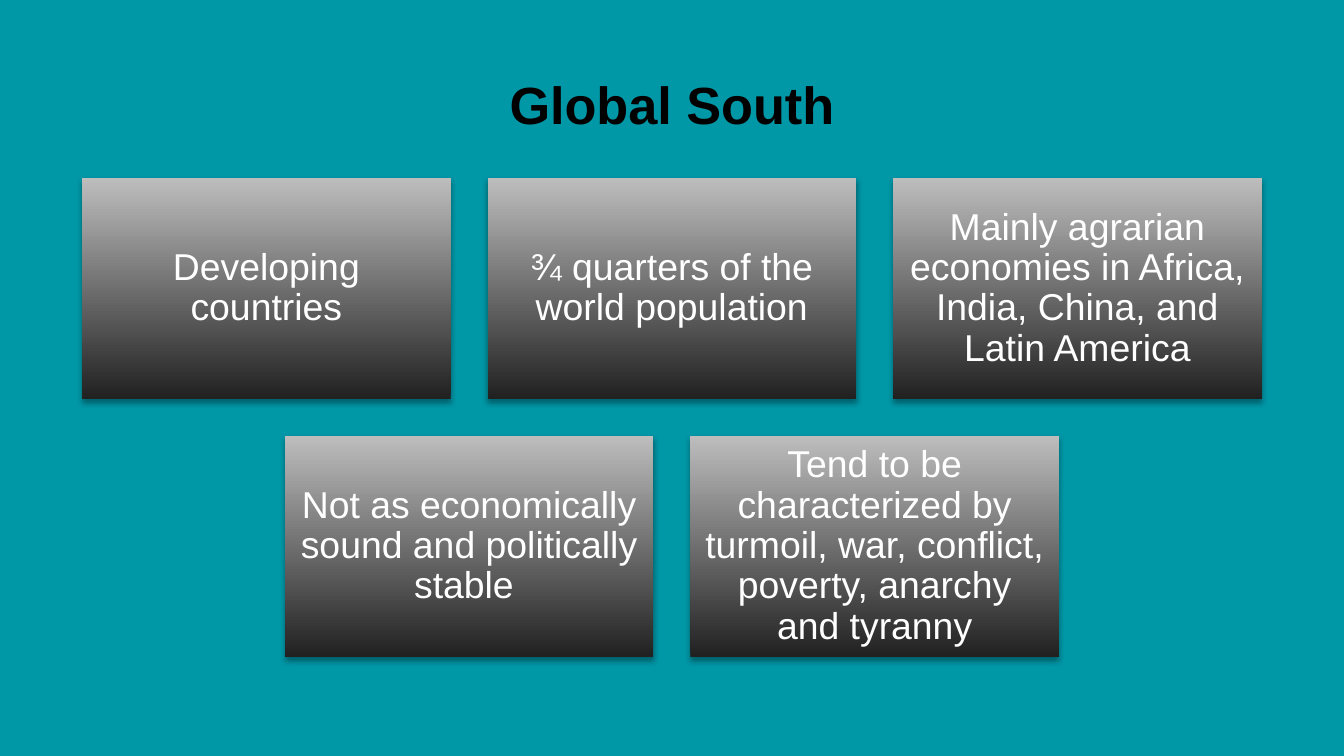
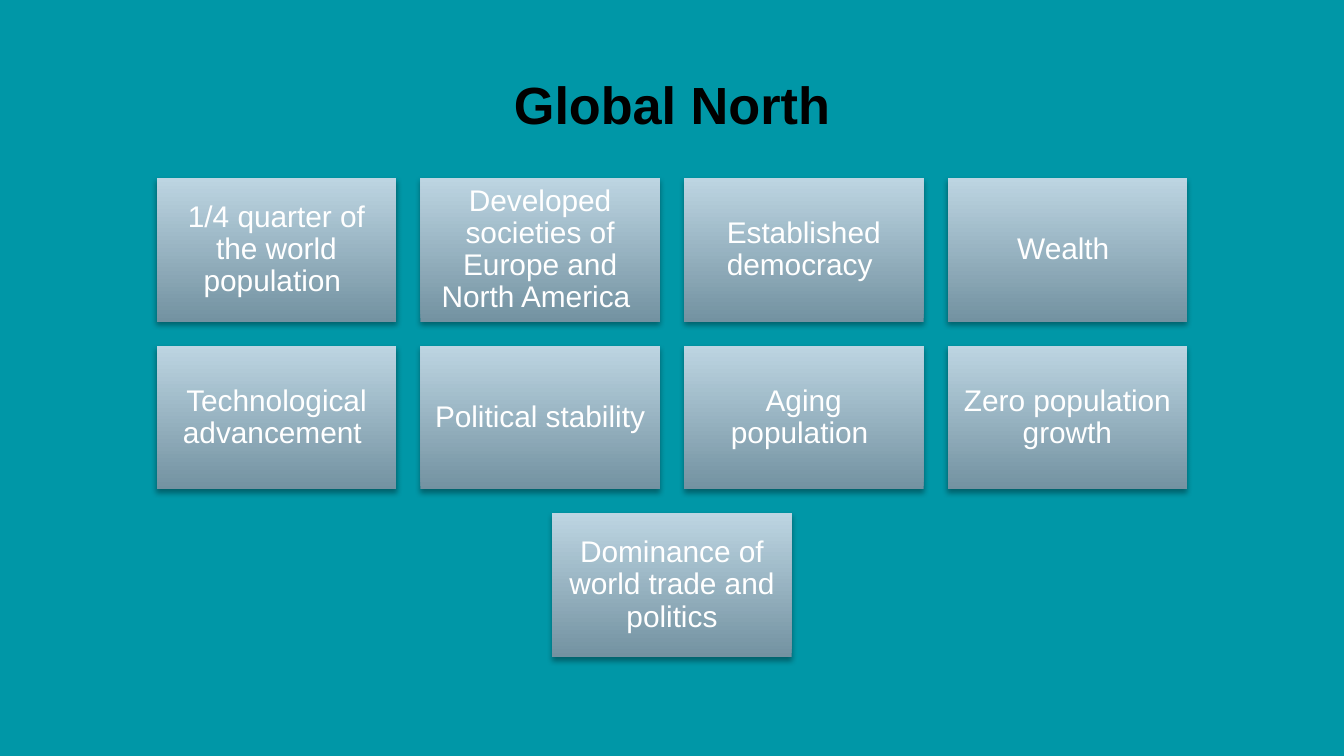
from lxml import etree
from pptx import Presentation
from pptx.dml.color import RGBColor
from pptx.enum.shapes import MSO_SHAPE
from pptx.enum.text import MSO_ANCHOR, PP_ALIGN
from pptx.oxml.ns import qn
from pptx.util import Pt

SLIDE_WIDTH, SLIDE_HEIGHT = 720, 405
GRID_TOP = 95.3
FONT = "Arial"

TEAL = RGBColor(0x00, 0x97, 0xA7)
BLACK = RGBColor(0x00, 0x00, 0x00)
WHITE = RGBColor(0xFF, 0xFF, 0xFF)
GREYS = (RGBColor(0x21, 0x21, 0x21), RGBColor(0xBD, 0xBD, 0xBD))
BLUES = (RGBColor(0x73, 0x92, 0xA1), RGBColor(0xBD, 0xD5, 0xE2))

SOUTH_ROWS = [
    [
        "Developing countries",
        "¾ quarters of the world population",
        "Mainly agrarian economies in Africa, India, China, and Latin America",
    ],
    [
        "Not as economically sound and politically stable ",
        "Tend to be characterized by turmoil, war, conflict, poverty, anarchy and tyranny",
    ],
]
NORTH_ROWS = [
    [
        "1/4 quarter of the world population ",
        "Developed societies of Europe and North America ",
        "Established democracy ",
        "Wealth ",
    ],
    [
        "Technological advancement ",
        "Political stability",
        "Aging population ",
        "Zero population growth",
    ],
    ["Dominance of world trade and politics"],
]


def write_text(shape, text, size, color, inset, bold=False):
    frame = shape.text_frame
    frame.text = text
    frame.word_wrap = True
    frame.vertical_anchor = MSO_ANCHOR.MIDDLE
    frame.margin_left = frame.margin_right = Pt(inset)
    frame.margin_top = frame.margin_bottom = Pt(inset)
    para = frame.paragraphs[0]
    para.alignment = PP_ALIGN.CENTER
    para.line_spacing = 0.9
    font = para.runs[0].font
    font.name, font.size, font.bold = FONT, Pt(size), bold
    font.color.rgb = color


def add_soft_shadow(shape):
    """Cast a faint black shadow straight down."""
    shape.shadow.inherit = False
    effects = shape._element.spPr.find(qn("a:effectLst"))
    shadow = etree.SubElement(
        effects, qn("a:outerShdw"), blurRad=str(Pt(3.1)), dist=str(Pt(1.8)),
        dir="5400000", rotWithShape="0",
    )
    color = etree.SubElement(shadow, qn("a:srgbClr"), val=str(BLACK))
    etree.SubElement(color, qn("a:alpha"), val="35000")


def add_card(page, left, top, width, height, text, size, colors):
    card = page.shapes.add_shape(
        MSO_SHAPE.RECTANGLE, Pt(left), Pt(top), Pt(width), Pt(height)
    )
    card.fill.gradient()
    card.fill.gradient_angle = 90
    for stop, color in zip(card.fill.gradient_stops, colors):
        stop.color.rgb = color
    card.line.fill.background()
    add_soft_shadow(card)
    write_text(card, text, size, WHITE, inset=0.3 * size)


def add_card_grid(page, rows, width, size, colors):
    """Stack centred rows of cards; height and gap follow from the width."""
    height, gap = 0.6 * width, 0.1 * width
    for row_index, row in enumerate(rows):
        row_width = len(row) * (width + gap) - gap
        left = (SLIDE_WIDTH - row_width) / 2
        top = GRID_TOP + row_index * (height + gap)
        for column, text in enumerate(row):
            add_card(page, left + column * (width + gap), top, width, height,
                     text, size, colors)


def add_page(deck, title):
    page = deck.slides.add_slide(deck.slide_layouts[6])
    page.background.fill.solid()
    page.background.fill.fore_color.rgb = TEAL
    box = page.shapes.add_textbox(Pt(24.5), Pt(35), Pt(671), Pt(45))
    write_text(box, title, 28, BLACK, inset=7.2, bold=True)
    return page


def main():
    deck = Presentation()
    deck.slide_width, deck.slide_height = Pt(SLIDE_WIDTH), Pt(SLIDE_HEIGHT)
    add_card_grid(add_page(deck, "Global South"), SOUTH_ROWS, 197.5, 20, GREYS)
    add_card_grid(add_page(deck, "Global North"), NORTH_ROWS, 128.4, 16, BLUES)
    deck.save("out.pptx")


if __name__ == "__main__":
    main()
